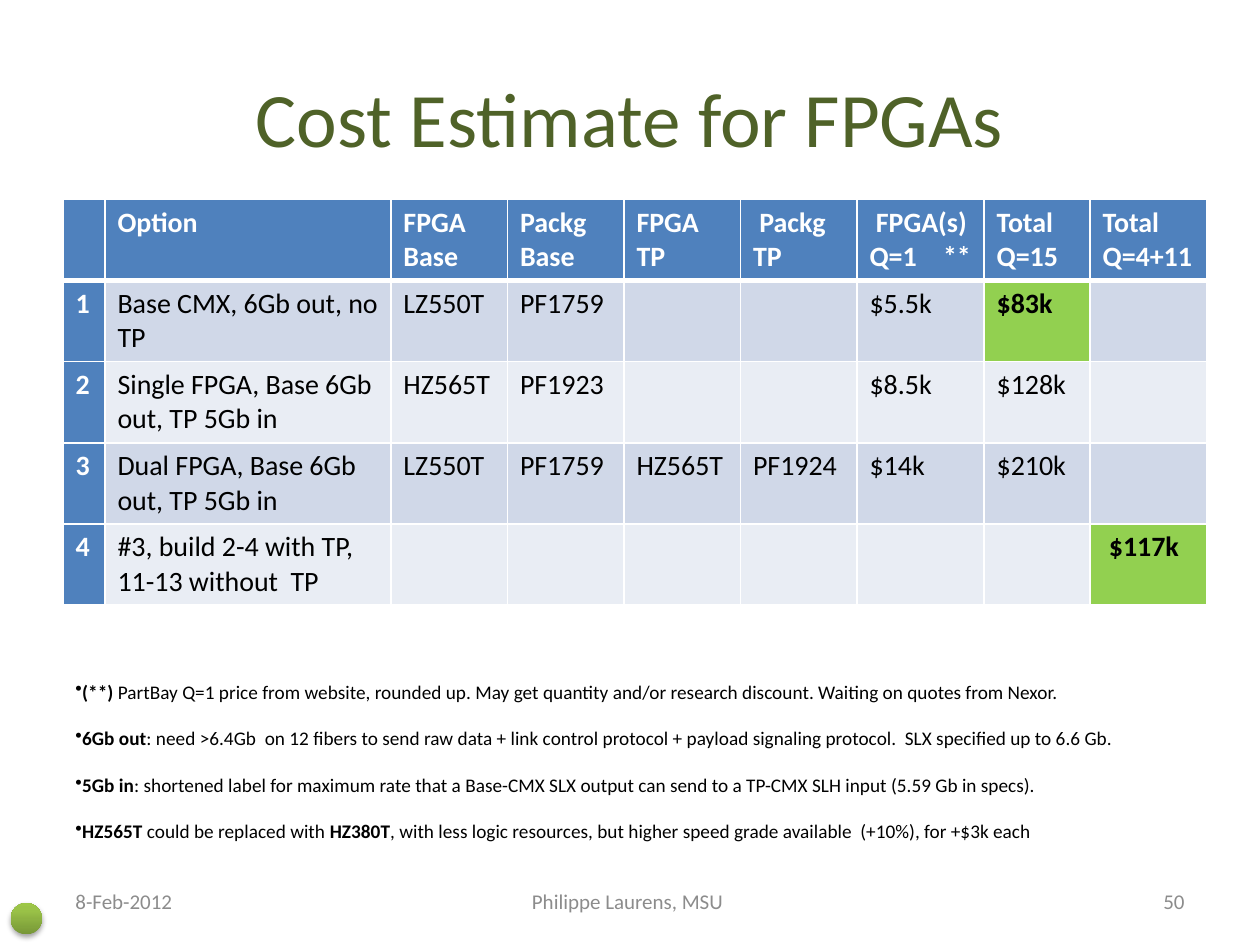
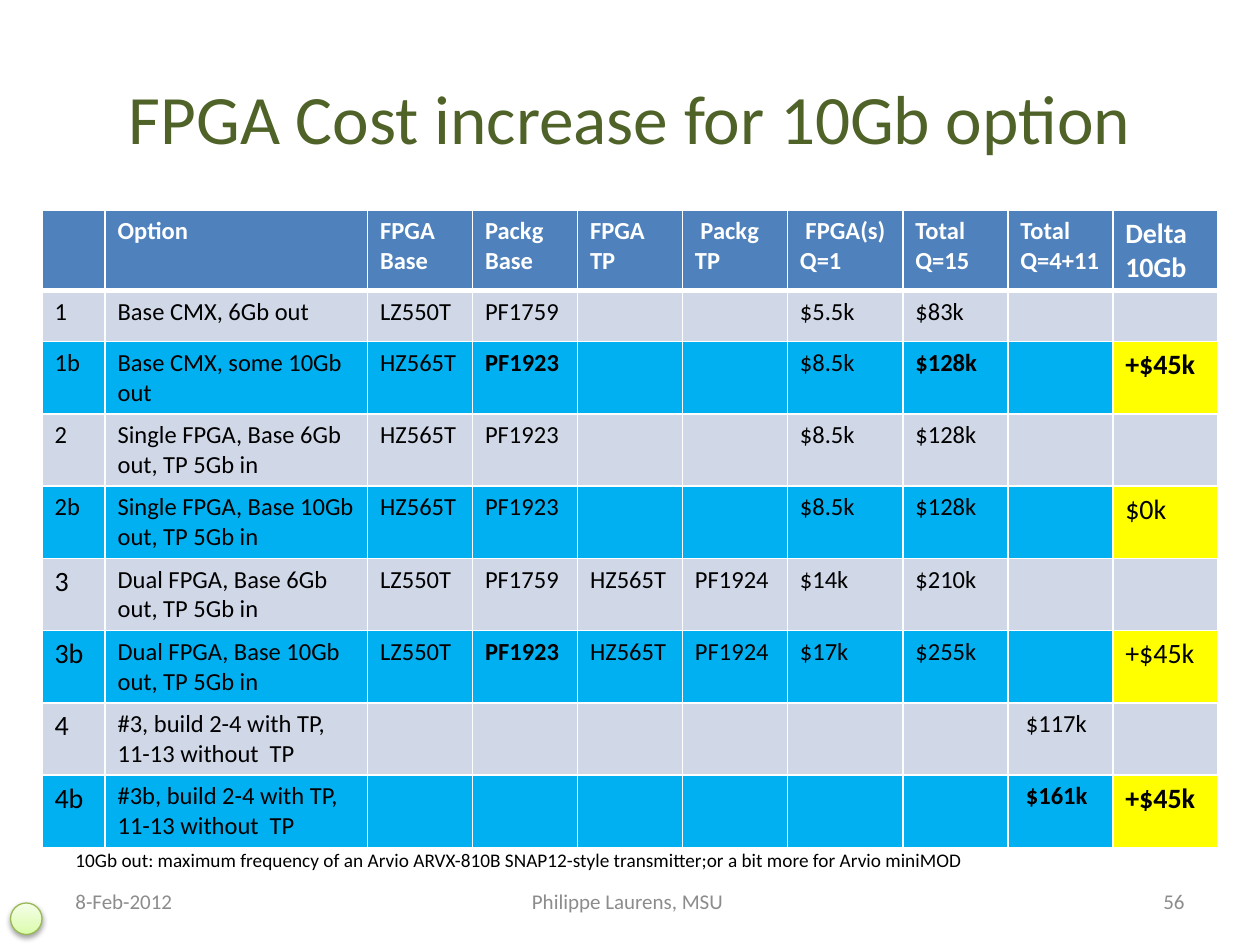
from lxml import etree
from pptx import Presentation
from pptx.dml.color import RGBColor
from pptx.enum import shapes, text
from pptx.oxml import ns
from pptx.util import Pt

FONT = "Calibri"
WHITE, BLACK, GRAY, TITLE = "FFFFFF", "000000", "8C8C8C", "4F6228"
HEADER, BAND, LIGHT = "4F81BD", "D0D8E8", "E9EDF4"
GREEN, CYAN, YELLOW = "92D050", "00B0F0", "FFFF00"
LEFT, CENTER, RIGHT = text.PP_ALIGN.LEFT, text.PP_ALIGN.CENTER, text.PP_ALIGN.RIGHT

HEADINGS = ["", "Option", "FPGA Base", "Packg Base", "FPGA TP", " Packg TP"]
TOTALS = ["Total Q=15", "Total Q=4+11"]
FOOTER = [
    ("8-Feb-2012", 36, 168, LEFT),
    ("Philippe Laurens, MSU ", 246, 228, CENTER),
]

ESTIMATE = {
    "title": ("Cost Estimate for FPGAs", 44),
    "number": "50",
    "place": (36, 114),
    "size": 16,
    "columns": [24, 163.4, 66.6, 66.6, 66.6, 66.6, 72.6, 60.6, 66.6],
    "heights": [46.35] * 5,
    "rows": [
        HEADINGS + [" FPGA(s) Q=1\t**"] + TOTALS,
        ["1", "Base CMX, 6Gb out, no TP", "LZ550T", "PF1759", "", "", "$5.5k", "$83k", ""],
        ["2", "Single FPGA, Base 6Gb out, TP 5Gb in", "HZ565T", "PF1923", "", "", "$8.5k", "$128k", ""],
        ["3", "Dual FPGA, Base 6Gb out, TP 5Gb in", "LZ550T", "PF1759", "HZ565T", "PF1924", "$14k", "$210k", ""],
        ["4", "#3, build 2-4 with TP,  11-13 without  TP", "", "", "", "", "", "", " $117k"],
    ],
    "notes": [
        [("(**) ", True), ("PartBay Q=1 price from website, rounded up. May get quantity and/or research "
                           "discount. Waiting on quotes from Nexor.", False)],
        [("6Gb out", True), (": need >6.4Gb  on 12 fibers to send raw data + link control protocol + "
                             "payload signaling protocol.  SLX specified up to 6.6 Gb.", False)],
        [("5Gb in", True), (": shortened label for maximum rate that a Base-CMX SLX output can send "
                            "to a TP-CMX SLH input (5.59 Gb in specs).", False)],
        [("HZ565T", True), (" could be replaced with ", False), ("HZ380T", True),
         (", with less logic resources, but higher speed grade available  (+10%), for +$3k each", False)],
    ],
    "notes_box": (36, 366, 648, 138),
    "bullet": "•",
    "dot": [(0, "779737"), (80, "9BC348"), (100, "9DC746")],
    "dot_line": None,
}

INCREASE = {
    "title": ("FPGA Cost increase for 10Gb option", 39.6),
    "number": "56",
    "place": (24, 120.2),
    "size": 14,
    "columns": [36, 150, 60, 60, 60, 60, 66, 60, 60, 60],
    "heights": [45.9, 29.2] + [41.3] * 7,
    "rows": [
        HEADINGS + [" FPGA(s) Q=1"] + TOTALS + ["Delta 10Gb"],
        ["1", "Base CMX, 6Gb out", "LZ550T", "PF1759", "", "", "$5.5k", "$83k", "", ""],
        ["1b", "Base CMX, some 10Gb out", "HZ565T", "PF1923", "", "", "$8.5k", "$128k", "", "+$45k"],
        ["2", "Single FPGA, Base 6Gb out, TP 5Gb in", "HZ565T", "PF1923", "", "", "$8.5k", "$128k", "", ""],
        ["2b", "Single FPGA, Base 10Gb out, TP 5Gb in", "HZ565T", "PF1923", "", "", "$8.5k", "$128k", "", "$0k"],
        ["3", "Dual FPGA, Base 6Gb out, TP 5Gb in", "LZ550T", "PF1759", "HZ565T", "PF1924", "$14k", "$210k", "", ""],
        ["3b", "Dual FPGA, Base 10Gb out, TP 5Gb in", "LZ550T", "PF1923", "HZ565T", "PF1924", "$17k", "$255k", "",
         "+$45k"],
        ["4", "#3, build 2-4 with TP,  11-13 without  TP", "", "", "", "", "", "", " $117k", ""],
        ["4b", "#3b, build 2-4 with TP,  11-13 without  TP", "", "", "", "", "", "", " $161k", "+$45k"],
    ],
    "notes": [[("10Gb out: maximum frequency of an Arvio ARVX-810B SNAP12-style transmitter;"
                "or a bit more for Arvio miniMOD", False)]],
    "notes_box": (36, 481, 648, 21),
    "bullet": None,
    "dot": [(0, "DAFDA7"), (35, "E4FCC2"), (100, "F5FFE7")],
    "dot_line": "98B955",
}


def estimate_style(row, column):
    size = ESTIMATE["size"]
    if row == 0 or column == 0:
        return HEADER, WHITE, True, size
    if (row, column) in [(1, 7), (4, 8)]:
        return GREEN, BLACK, True, size
    return (BAND if row % 2 else LIGHT), BLACK, False, size


def increase_style(row, column):
    size = 16 if column == 9 or (column == 0 and row >= 5) else INCREASE["size"]
    if row == 0:
        return HEADER, WHITE, True, size
    bold = (row, column) in [(2, 3), (2, 7), (2, 9), (6, 3), (8, 8), (8, 9)]
    if row % 2:
        return BAND, BLACK, bold, size
    return (YELLOW if column == 9 else CYAN), BLACK, bold, size


def color(value):
    return RGBColor.from_string(value)


def add_xml(parent, tag, **attributes):
    return etree.SubElement(parent, ns.qn(tag), **{key: str(value) for key, value in attributes.items()})


def write(paragraph, content, size=12, fill=BLACK, bold=False, align=LEFT):
    paragraph.alignment = align
    runs = [(content, bold)] if isinstance(content, str) else content
    for words, is_bold in runs:
        run = paragraph.add_run()
        run.text = words
        run.font.name = FONT
        run.font.size = Pt(size)
        run.font.bold = is_bold
        run.font.color.rgb = color(fill)


def add_text(slide, box, contents, gap=0, bullet=None, **style):
    frame = slide.shapes.add_textbox(*map(Pt, box)).text_frame
    frame.word_wrap = True
    frame.vertical_anchor = text.MSO_ANCHOR.MIDDLE
    for index, content in enumerate(contents):
        paragraph = frame.add_paragraph() if index else frame.paragraphs[0]
        write(paragraph, content, **style)
        if index < len(contents) - 1:
            paragraph.space_after = Pt(gap)
        if bullet:
            add_xml(paragraph._p.get_or_add_pPr(), "a:buChar", char=bullet)


def add_borders(cell, row):
    properties = cell._tc.get_or_add_tcPr()
    widths = {"L": 1, "R": 1, "T": 3 if row == 1 else 1, "B": 3 if row == 0 else 1}
    for side, width in widths.items():
        line = add_xml(properties, "a:ln" + side, w=Pt(width))
        add_xml(add_xml(line, "a:solidFill"), "a:srgbClr", val=WHITE)


def add_cost_table(slide, content, style):
    rows, columns = content["rows"], content["columns"]
    left, top = content["place"]
    box = (left, top, sum(columns), sum(content["heights"]))
    table = slide.shapes.add_table(len(rows), len(columns), *map(Pt, box)).table
    table.first_row = table.horz_banding = False
    for column, width in zip(table.columns, columns):
        column.width = Pt(width)
    for row, height in zip(table.rows, content["heights"]):
        row.height = Pt(height)
    for row, values in enumerate(rows):
        for column, value in enumerate(values):
            cell = table.cell(row, column)
            fill, font_fill, bold, size = style(row, column)
            add_borders(cell, row)
            cell.fill.solid()
            cell.fill.fore_color.rgb = color(fill)
            if not value:
                continue
            paragraph = cell.text_frame.paragraphs[0]
            write(paragraph, value, size=size, fill=font_fill, bold=bold)
            if "\t" in value:
                stops = add_xml(paragraph._p.get_or_add_pPr(), "a:tabLst")
                add_xml(stops, "a:tab", pos=Pt(42), algn="l")


def add_dot(slide, stops, line):
    dot = slide.shapes.add_shape(shapes.MSO_SHAPE.OVAL, Pt(6), Pt(516), Pt(18), Pt(18))
    dot.fill.gradient()
    gradient = dot._element.spPr.find(ns.qn("a:gradFill"))
    for child in list(gradient):
        gradient.remove(child)
    stop_list = add_xml(gradient, "a:gsLst")
    for position, value in stops:
        add_xml(add_xml(stop_list, "a:gs", pos=position * 1000), "a:srgbClr", val=value)
    add_xml(gradient, "a:lin", ang=270 * 60000, scaled=0)
    if line:
        dot.line.color.rgb = color(line)
        dot.line.width = Pt(0.75)
    else:
        dot.line.fill.background()
    dot.shadow.inherit = False
    effects = dot._element.spPr.find(ns.qn("a:effectLst"))
    shadow = add_xml(effects, "a:outerShdw", blurRad=Pt(3.1), dist=Pt(1.7), dir=90 * 60000, rotWithShape=0)
    add_xml(add_xml(shadow, "a:srgbClr", val=BLACK), "a:alpha", val=36000)


def build_slide(presentation, content, style):
    slide = presentation.slides.add_slide(presentation.slide_layouts[6])
    title, size = content["title"]
    add_text(slide, (36, 21.6, 648, 90), [title], size=size, fill=TITLE, align=CENTER)
    add_cost_table(slide, content, style)
    add_text(slide, content["notes_box"], content["notes"], gap=13.4, bullet=content["bullet"], size=11)
    for words, left, width, align in FOOTER + [(content["number"], 516, 168, RIGHT)]:
        add_text(slide, (left, 500.5, width, 28.75), [words], fill=GRAY, align=align)
    add_dot(slide, content["dot"], content["dot_line"])


def main():
    presentation = Presentation()
    presentation.slide_width, presentation.slide_height = Pt(720), Pt(540)
    build_slide(presentation, ESTIMATE, estimate_style)
    build_slide(presentation, INCREASE, increase_style)
    presentation.save("out.pptx")


if __name__ == "__main__":
    main()
